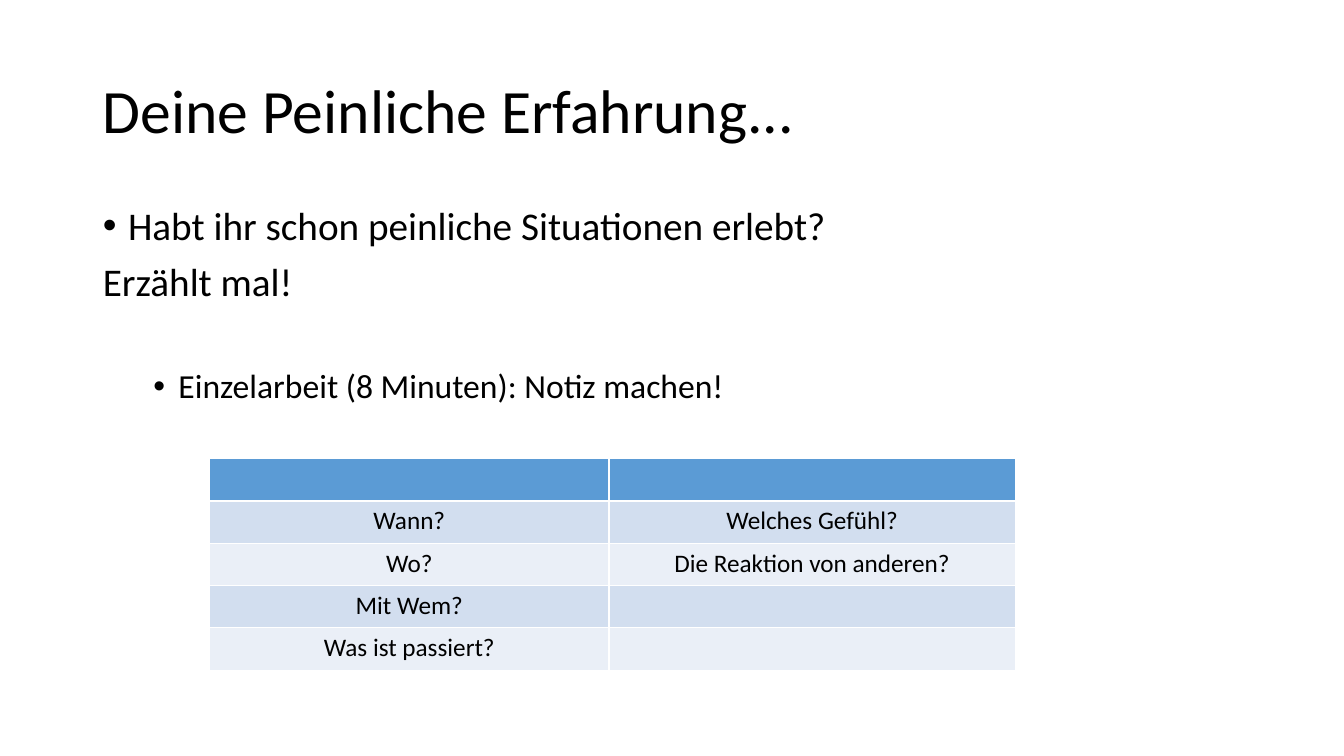
from lxml.etree import SubElement
from pptx import Presentation
from pptx.dml.color import RGBColor
from pptx.enum.text import MSO_ANCHOR, MSO_AUTO_SIZE, PP_ALIGN
from pptx.oxml.ns import qn
from pptx.util import Inches, Pt

COLORS = {
    "text": "000000",
    "header": "5B9BD5",
    "odd_row": "D2DEEF",
    "even_row": "EAEFF7",
}
FONT = "Calibri"

TITLE = "Deine Peinliche Erfahrung..."
# text, level, size, bulleted, space before
PROMPTS = [
    ("Habt ihr schon peinliche Situationen erlebt?", 0, 28, True, 10),
    ("Erzählt mal!", 0, 28, False, 10),
    ("Einzelarbeit (8 Minuten): Notiz machen!", 1, 24, True, 46),
]
QUESTIONS = [
    ("", ""),
    ("Wann?", "Welches Gefühl?"),
    ("Wo?", "Die Reaktion von anderen?"),
    ("Mit Wem?", ""),
    ("Was ist passiert?", ""),
]


class LessonSlide:
    def __init__(self, deck):
        self.slide = deck.slides.add_slide(deck.slide_layouts[1])

    def color(self, name):
        return RGBColor.from_string(COLORS[name])

    def format_runs(self, paragraph, size):
        for run in paragraph.runs:
            run.font.name = FONT
            run.font.size = Pt(size)
            run.font.color.rgb = self.color("text")

    def place(self, placeholder, left, top, width, height, anchor):
        placeholder.left, placeholder.top = Inches(left), Inches(top)
        placeholder.width, placeholder.height = Inches(width), Inches(height)
        frame = placeholder.text_frame
        frame.auto_size = MSO_AUTO_SIZE.NONE
        frame.vertical_anchor = anchor
        return frame

    def set_bullet(self, paragraph, level, bulleted):
        """Set the bullet and a hanging indent, or neither at the left edge."""
        properties = paragraph._p.get_or_add_pPr()
        hang = Inches(0.25) if bulleted else 0
        properties.set("marL", str(Inches(0.5 * level) + hang))
        properties.set("indent", str(-hang))
        if bulleted:
            SubElement(properties, qn("a:buFont"), typeface="Arial")
            SubElement(properties, qn("a:buChar"), char="•")
        else:
            SubElement(properties, qn("a:buNone"))

    def add_title(self, text):
        frame = self.place(self.slide.shapes.title, 0.92, 0.4, 11.5, 1.45,
                           MSO_ANCHOR.MIDDLE)
        frame.text = text
        heading = frame.paragraphs[0]
        heading.alignment = PP_ALIGN.LEFT
        heading.line_spacing = 0.9
        self.format_runs(heading, 44)

    def add_prompts(self, prompts):
        frame = self.place(self.slide.placeholders[1], 0.92, 2, 11.5, 4.76,
                           MSO_ANCHOR.TOP)
        frame.text = "\n".join(prompt[0] for prompt in prompts)
        for paragraph, prompt in zip(frame.paragraphs, prompts):
            _, level, size, bulleted, space_before = prompt
            paragraph.level = level
            paragraph.line_spacing = 0.9
            paragraph.space_before = Pt(space_before)
            self.set_bullet(paragraph, level, bulleted)
            self.format_runs(paragraph, size)

    def add_questions(self, questions, left, top, widths, row_height):
        table = self.slide.shapes.add_table(
            len(questions), len(widths), Inches(left), Inches(top),
            Inches(sum(widths)), Inches(row_height * len(questions))).table
        for column, width in zip(table.columns, widths):
            column.width = Inches(width)
        for row, texts in enumerate(questions):
            band = "odd_row" if row % 2 else "even_row"
            for column, text in enumerate(texts):
                cell = table.cell(row, column)
                cell.fill.solid()
                cell.fill.fore_color.rgb = self.color(band if row else "header")
                if text:
                    cell.text_frame.text = text
                    question = cell.text_frame.paragraphs[0]
                    question.alignment = PP_ALIGN.CENTER
                    self.format_runs(question, 18)


def main():
    deck = Presentation()
    deck.slide_width, deck.slide_height = Inches(13.33), Inches(7.5)
    lesson = LessonSlide(deck)
    lesson.add_title(TITLE)
    lesson.add_prompts(PROMPTS)
    lesson.add_questions(QUESTIONS, 2.08, 4.55, (3.96, 4.03), 0.42)
    deck.save("out.pptx")


if __name__ == "__main__":
    main()
